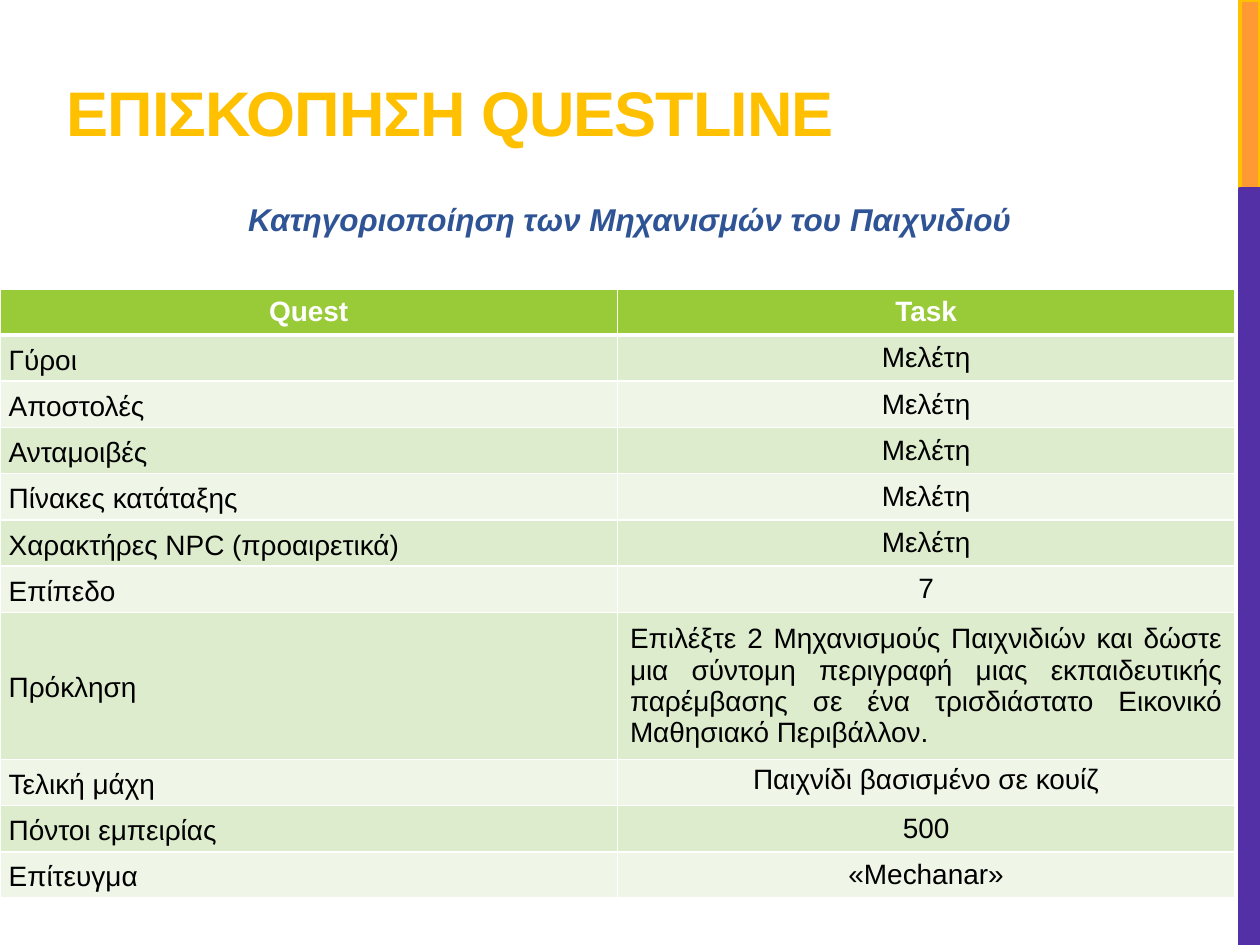
import pptx
import pptx.util
import pptx.dml.color
import pptx.enum.shapes
import pptx.enum.text
import pptx.oxml
import pptx.oxml.ns

Pt = pptx.util.Pt
RGBColor = pptx.dml.color.RGBColor
ALIGN = pptx.enum.text.PP_ALIGN
ANCHOR = pptx.enum.text.MSO_ANCHOR

WHITE = RGBColor(0xFF, 0xFF, 0xFF)
BLACK = RGBColor(0, 0, 0)
GOLD = RGBColor(0xFF, 0xC0, 0)
ORANGE = RGBColor(0xFF, 0x99, 0x33)
PURPLE = RGBColor(0x53, 0x30, 0xA5)
BLUE = RGBColor(0x2F, 0x54, 0x96)
GREEN = RGBColor(0x99, 0xCB, 0x38)
BANDS = [RGBColor(0xDE, 0xEC, 0xCE), RGBColor(0xEF, 0xF6, 0xE8)]

HEADINGS = ("Quest", "Task")
CHALLENGE = "Πρόκληση"
FINAL_BATTLE = "Τελική μάχη"
QUESTS = [
    ("Γύροι", "Μελέτη"),
    ("Αποστολές", "Μελέτη"),
    ("Ανταμοιβές", "Μελέτη"),
    ("Πίνακες κατάταξης", "Μελέτη"),
    ("Χαρακτήρες NPC (προαιρετικά)", "Μελέτη"),
    ("Επίπεδο", "7"),
    (CHALLENGE, "Επιλέξτε 2 Μηχανισμούς Παιχνιδιών και δώστε μια σύντομη "
                "περιγραφή μιας εκπαιδευτικής παρέμβασης σε ένα τρισδιάστατο "
                "Εικονικό Μαθησιακό Περιβάλλον."),
    (FINAL_BATTLE, "Παιχνίδι βασισμένο σε κουίζ"),
    ("Πόντοι εμπειρίας", "500"),
    ("Επίτευγμα", "«Mechanar»"),
]


def style_text(paragraph, size, color, bold=False, italic=False, align=ALIGN.LEFT):
    """Set the font and alignment of a paragraph."""
    paragraph.alignment = align
    for run in paragraph.runs:
        font = run.font
        font.name, font.size = "Arial", Pt(size)
        font.bold, font.italic = bold, italic
        font.color.rgb = color


def add_side_band(slide, left, top, width, height):
    """Place the two-colour band, its upper fifth orange."""
    upper = height / 5
    for offset, part, fill, line in ((0, upper, ORANGE, GOLD),
                                     (upper, height - upper, PURPLE, PURPLE)):
        band = slide.shapes.add_shape(
            pptx.enum.shapes.MSO_SHAPE.RECTANGLE,
            Pt(left), Pt(top + offset), Pt(width), Pt(part))
        band.shadow.inherit = False
        band.fill.solid()
        band.fill.fore_color.rgb = fill
        band.line.color.rgb = line
        band.line.width = Pt(2.25)


def add_title(slide, left, top, width, height):
    """Place the slide title at the bottom of its box."""
    title = slide.shapes.add_textbox(Pt(left), Pt(top), Pt(width), Pt(height))
    frame = title.text_frame
    frame.word_wrap = True
    frame.margin_right = 0
    frame.vertical_anchor = ANCHOR.BOTTOM
    frame.text = "ΕΠΙΣΚΟΠΗΣΗ QUESTLINE"
    style_text(frame.paragraphs[0], 36, GOLD, bold=True)
    frame.paragraphs[0].runs[0].font._element.set("spc", "-60")


def add_subtitle(slide, left, top, width, height):
    """Place the centred subtitle."""
    subtitle = slide.shapes.add_textbox(Pt(left), Pt(top), Pt(width), Pt(height))
    frame = subtitle.text_frame
    frame.word_wrap = True
    frame.text = "Κατηγοριοποίηση των Μηχανισμών του Παιχνιδιού"
    paragraph = frame.paragraphs[0]
    paragraph.line_spacing = 1.5
    style_text(paragraph, 18, BLUE, bold=True, italic=True, align=ALIGN.CENTER)


def set_borders(cell, bottom_width):
    """Give a cell white borders, with its own bottom width."""
    properties = cell._tc.get_or_add_tcPr()
    widths = (("lnL", 1), ("lnR", 1), ("lnT", 1), ("lnB", bottom_width))
    for index, (tag, width) in enumerate(widths):
        properties.insert(index, pptx.oxml.parse_xml(
            f'<a:{tag} {pptx.oxml.ns.nsdecls("a")} w="{Pt(width)}"><a:solidFill>'
            f'<a:srgbClr val="{WHITE}"/></a:solidFill></a:{tag}>'))


def fill_cell(cell, text, fill, color=BLACK, bold=False, align=ALIGN.CENTER,
              bottom_width=1):
    """Write and format one table cell."""
    cell.text = text
    cell.vertical_anchor = ANCHOR.MIDDLE
    style_text(cell.text_frame.paragraphs[0], 16, color, bold, align=align)
    cell.fill.solid()
    cell.fill.fore_color.rgb = fill
    set_borders(cell, bottom_width)


def tighten_cell(cell):
    """Use narrow margins and looser lines in a cell."""
    cell.margin_left = cell.margin_right = Pt(5)
    cell.margin_top = cell.margin_bottom = 0
    cell.text_frame.paragraphs[0].line_spacing = 1.15


def add_quest_table(slide, left, top, width, height):
    """Place the table of quests and tasks."""
    table = slide.shapes.add_table(
        len(QUESTS) + 1, 2, Pt(left), Pt(top), Pt(width), Pt(height)).table
    for column in table.columns:
        column.width = Pt(width / 2)
    row_height = 26.4
    for row in table.rows:
        row.height = Pt(row_height)
    for column, heading in enumerate(HEADINGS):
        fill_cell(table.cell(0, column), heading, GREEN, WHITE, bold=True,
                  bottom_width=3)
    for index, (quest, task) in enumerate(QUESTS):
        fill = BANDS[index % 2]
        quest_cell, task_cell = table.cell(index + 1, 0), table.cell(index + 1, 1)
        fill_cell(quest_cell, quest, fill, align=ALIGN.LEFT)
        tighten_cell(quest_cell)
        fill_cell(task_cell, task, fill,
                  align=ALIGN.JUSTIFY if quest == CHALLENGE else ALIGN.CENTER)
        if quest == CHALLENGE:
            table.rows[index + 1].height = Pt(height - len(QUESTS) * row_height)
        if quest == FINAL_BATTLE:
            tighten_cell(task_cell)
            task_cell.vertical_anchor = ANCHOR.TOP


def main():
    """Build and save the slide."""
    deck = pptx.Presentation()
    deck.slide_width, deck.slide_height = Pt(720), Pt(540)
    slide = deck.slides.add_slide(deck.slide_layouts[6])
    add_side_band(slide, 708.5, 0, 11.5, 540)
    add_title(slide, 31, -19.5, 456, 108)
    add_subtitle(slide, 59.5, 100, 601, 37)
    add_quest_table(slide, 0, 165, 705.6, 347.5)
    deck.save("out.pptx")


if __name__ == "__main__":
    main()
